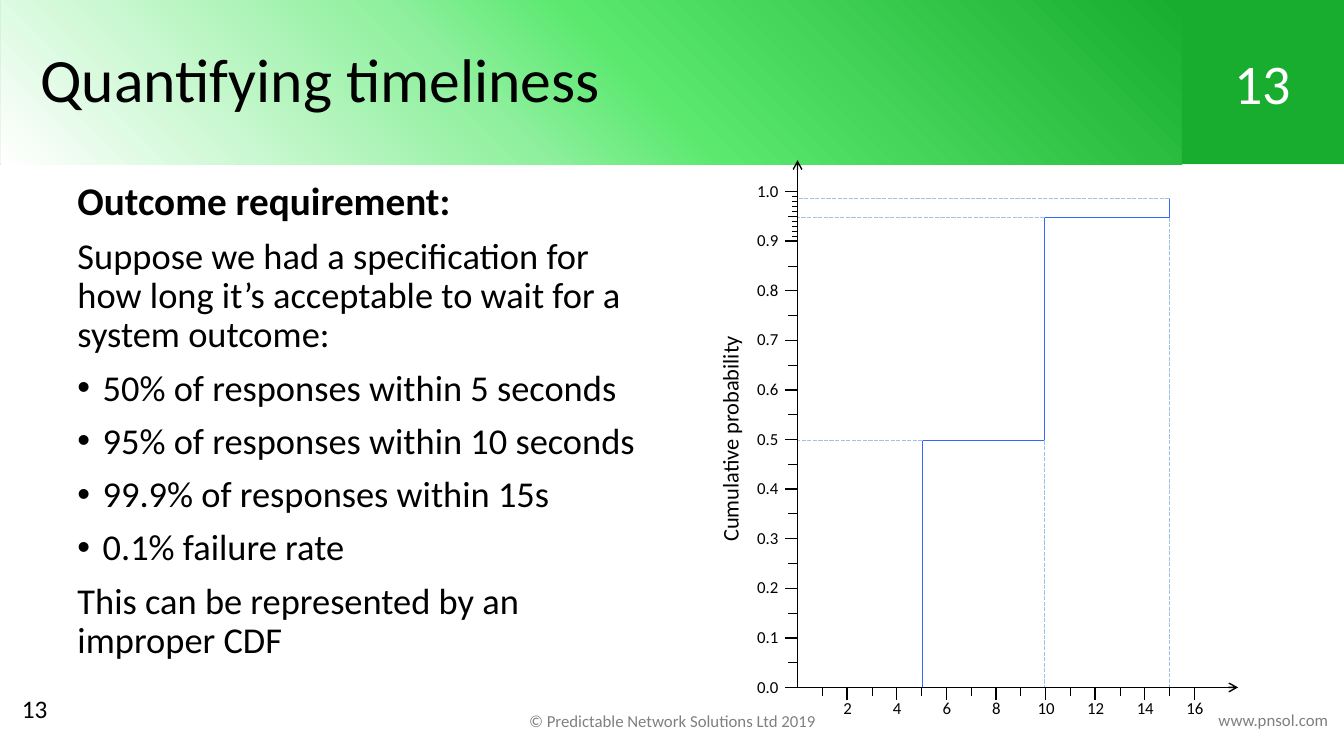
from lxml import etree
from pptx import Presentation
from pptx.dml.color import RGBColor
from pptx.enum.dml import MSO_LINE
from pptx.enum.shapes import MSO_CONNECTOR, MSO_SHAPE
from pptx.enum.text import MSO_ANCHOR, PP_ALIGN
from pptx.oxml.ns import qn
from pptx.util import Inches, Pt

STRAIGHT = MSO_CONNECTOR.STRAIGHT
RECTANGLE = MSO_SHAPE.RECTANGLE
DASH = MSO_LINE.SQUARE_DOT
LEFT, CENTER = PP_ALIGN.LEFT, PP_ALIGN.CENTER
TOP, MIDDLE = MSO_ANCHOR.TOP, MSO_ANCHOR.MIDDLE

COLORS = {
    "black": "000000", "white": "FFFFFF", "green": "18AD2E",
    "pale green": "91F09F", "bright green": "5AE86F",
    "copyright": "808080", "address": "7F7F7F",
    "step": "3366FF", "guide": "9DC3E6",
}
HEADER_STOPS = [(0, "white"), (40, "pale green"), (54, "bright green"), (100, "green")]
REQUIREMENTS = [
    "50% of responses within 5 seconds",
    "95% of responses within 10 seconds",
    "99.9% of responses within 15s",
    "0.1% failure rate",
]
AXIS_X, AXIS_Y = 7.91, 6.82
SECOND_WIDTH, PROBABILITY_HEIGHT = 0.246, 4.92
FIVE, TEN, FIFTEEN = 9.15, 10.36, 11.6
HALF, MOST, ALMOST_ALL = 4.37, 2.16, 1.97


def rgb(name):
    """Return the named colour."""
    return RGBColor.from_string(COLORS[name])


def write(paragraph, text, size=12, color="black", bold=False, align=LEFT,
          line_spacing=None, before=0, bullet=False):
    """Put formatted text into a paragraph."""
    if bullet:
        properties = paragraph._p.get_or_add_pPr()
        properties.set("marL", str(Inches(0.25)))
        properties.set("indent", str(-Inches(0.25)))
        etree.SubElement(properties, qn("a:buFont")).set("typeface", "Arial")
        etree.SubElement(properties, qn("a:buChar")).set("char", "•")
    paragraph.alignment = align
    paragraph.space_before = Pt(before)
    if line_spacing:
        paragraph.line_spacing = line_spacing
    run = paragraph.add_run()
    run.text = text
    run.font.name = "Calibri"
    run.font.size = Pt(size)
    run.font.bold = bold
    run.font.color.rgb = rgb(color)


def add_text(slide, box, text, rotation=0, **text_format):
    """Add a text box with one paragraph and return its frame."""
    shape = slide.shapes.add_textbox(*map(Inches, box))
    shape.rotation = rotation
    frame = shape.text_frame
    frame.word_wrap = True
    frame.vertical_anchor = TOP
    write(frame.paragraphs[0], text, **text_format)
    return frame


def add_panel(slide, box, text, **text_format):
    """Add a green rectangle with vertically centred text."""
    shape = slide.shapes.add_shape(RECTANGLE, *map(Inches, box))
    shape.shadow.inherit = False
    shape.fill.solid()
    shape.fill.fore_color.rgb = rgb("green")
    shape.line.fill.background()
    shape.text_frame.word_wrap = True
    shape.text_frame.vertical_anchor = MIDDLE
    write(shape.text_frame.paragraphs[0], text, **text_format)
    return shape


def set_corner_gradient(shape, stops):
    """Fill a shape with a circular gradient from its lower left corner."""
    solid = shape._element.spPr.find(qn("a:solidFill"))
    gradient = etree.Element(qn("a:gradFill"), rotWithShape="1")
    stop_list = etree.SubElement(gradient, qn("a:gsLst"))
    for position, color in stops:
        stop = etree.SubElement(stop_list, qn("a:gs"), pos=str(position * 1000))
        etree.SubElement(stop, qn("a:srgbClr"), val=COLORS[color])
    circle = etree.SubElement(gradient, qn("a:path"))
    circle.set("path", "circle")
    etree.SubElement(circle, qn("a:fillToRect"), t="100000", r="100000")
    solid.getparent().replace(solid, gradient)


def add_line(slide, start, end, color="black", width=1, dash=None, arrow=False):
    """Draw a straight line, optionally dashed or with an arrowhead."""
    connector = slide.shapes.add_connector(STRAIGHT, *map(Inches, (*start, *end)))
    connector.line.color.rgb = rgb(color)
    connector.line.width = Pt(width)
    if dash:
        connector.line.dash_style = dash
    if arrow:
        etree.SubElement(connector.line._get_or_add_ln(), qn("a:tailEnd")).set("type", "arrow")
    etree.SubElement(connector._element.spPr, qn("a:effectLst"))


def add_header_and_footer(slide):
    """Add the title band, slide numbers and footer texts."""
    add_text(slide, (5.04, 7, 3.26, 0.3), "© Predictable Network Solutions Ltd 2019",
             color="copyright", align=CENTER)
    add_panel(slide, (11.71, 0, 1.63, 1.63), "13", size=40, color="white", align=CENTER)
    add_text(slide, (11.93, 6.99, 1.4, 0.3), "www.pnsol.com", color="address", align=CENTER)
    add_text(slide, (0.12, 6.83, 0.86, 0.53), "13", size=18)
    title = add_panel(slide, (0.01, 0, 11.71, 1.63), "Quantifying timeliness",
                      size=44, line_spacing=0.9)
    title.text_frame.margin_left = Inches(0.39)
    set_corner_gradient(title, HEADER_STOPS)


def add_requirement_text(slide):
    """Add the outcome requirement with its bullets."""
    frame = add_text(slide, (0.67, 1.75, 5.89, 4.95), "Outcome requirement:",
                     size=28, bold=True, line_spacing=0.9)
    intro = ("Suppose we had a specification for how long it’s acceptable "
             "to wait for a system outcome:")
    closing = "This can be represented by an improper CDF"
    for text in [intro, *REQUIREMENTS, closing]:
        write(frame.add_paragraph(), text, size=26, line_spacing=0.9, before=10,
              bullet=text in REQUIREMENTS)


def add_probability_axis(slide):
    """Draw the vertical axis with ticks, labels and its name."""
    def tick(probability, length, width):
        y = AXIS_Y - PROBABILITY_HEIGHT * probability
        add_line(slide, (AXIS_X - length, y), (AXIS_X, y), width=width)
        return y

    add_line(slide, (AXIS_X, AXIS_Y), (AXIS_X, 1.59), arrow=True)
    for tenth in range(11):
        y = tick(tenth / 10, 0.12, 1)
        add_text(slide, (7.39, y - 0.16, 0.45, 0.3), f"{tenth / 10:.1f}", align=CENTER)
    for tenth in range(10):
        tick(tenth / 10 + 0.05, 0.09, 0.5)
    for hundredth in range(91, 100):
        tick(hundredth / 100, 0.05, 0.5)
    add_text(slide, (6.04, 4.17, 2.4, 0.37), "Cumulative probability",
             rotation=270, size=16, align=CENTER)


def add_time_axis(slide):
    """Draw the horizontal axis with ticks and labels."""
    for second in range(1, 17):
        x = AXIS_X + SECOND_WIDTH * second
        major = second % 2 == 0
        add_line(slide, (x, AXIS_Y + (0.12 if major else 0.08)), (x, AXIS_Y),
                 width=1 if major else 0.5)
        if major:
            add_text(slide, (x - 0.22, 6.87, 0.45, 0.3), str(second), align=CENTER)
    add_line(slide, (AXIS_X, AXIS_Y), (12.28, AXIS_Y), arrow=True)


def add_distribution(slide):
    """Draw the stepped distribution and its dashed guides."""
    steps = [(FIVE, AXIS_Y), (FIVE, HALF), (TEN, HALF), (TEN, MOST),
             (FIFTEEN, MOST), (FIFTEEN, ALMOST_ALL)]
    for start, end in zip(steps, steps[1:]):
        add_line(slide, start, end, color="step")
    for x, y in [(TEN, MOST), (FIVE, HALF), (FIFTEEN, ALMOST_ALL)]:
        add_line(slide, (x, y), (AXIS_X, y), color="guide", dash=DASH)
    for x, y in [(TEN, HALF), (FIFTEEN, MOST)]:
        add_line(slide, (x, y), (x, AXIS_Y), color="guide", dash=DASH)


def main():
    """Build and save the presentation."""
    presentation = Presentation()
    presentation.slide_width = Inches(13.33)
    presentation.slide_height = Inches(7.5)
    slide = presentation.slides.add_slide(presentation.slide_layouts[6])
    add_header_and_footer(slide)
    add_requirement_text(slide)
    add_probability_axis(slide)
    add_distribution(slide)
    add_time_axis(slide)
    presentation.save("out.pptx")


if __name__ == "__main__":
    main()
